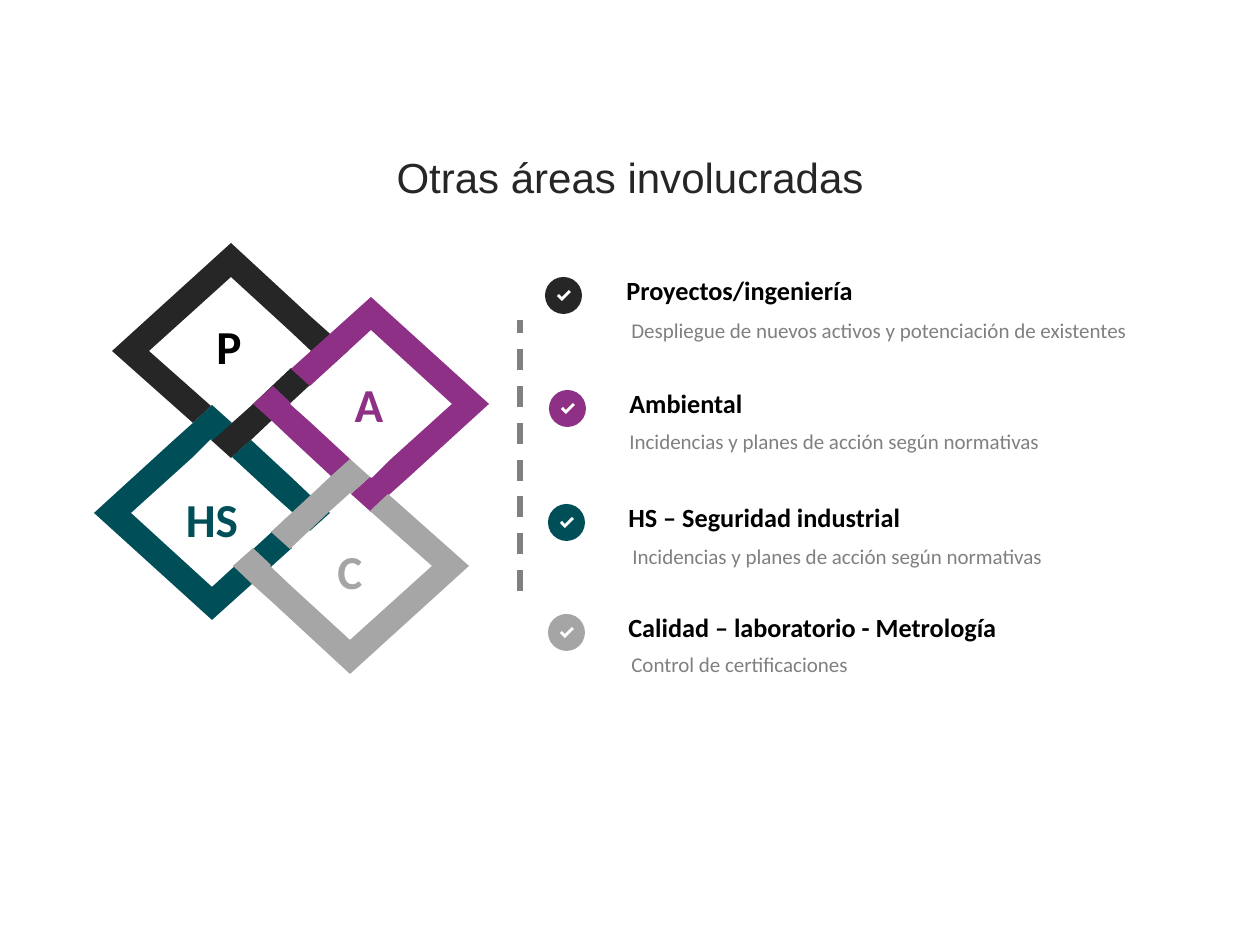
from pptx import Presentation
from pptx.dml.color import RGBColor
from pptx.enum.dml import MSO_LINE
from pptx.enum.shapes import MSO_CONNECTOR as CONN, MSO_SHAPE as SHAPE
from pptx.enum.text import MSO_ANCHOR as ANCHOR, PP_ALIGN as ALIGN
from pptx.oxml.ns import qn
from pptx.util import Pt

PX = 914400 / 126  # EMU per px
DARK, PURPLE, TEAL, GRAY = "262626", "8E3086", "004F58", "A5A5A5"
BLACK, MUTED, WHITE = "000000", "808080", "FFFFFF"

# Interlaced diamond bands, each in two parts; turning by 180° gives the other two
DIAMOND_W, DIAMOND_H = 236, 215
SIDE_LINK = [
    [(98, 163), (79, 180), (38, 142), (20, 125), (0, 107), (20, 89),
     (38, 106), (37, 107), (38, 108), (57, 125)],
    [(118, 0), (38, 72), (57, 89), (118, 33), (199, 107), (137, 163),
     (120, 180), (118, 181), (117, 180), (98, 197), (118, 215), (137, 197),
     (156, 180), (236, 107)],
]
TOP_LINK = [
    [(57, 90), (38, 73), (79, 35), (97, 18), (117, 0), (137, 18),
     (118, 35), (117, 34), (116, 35), (97, 52)],
    [(155, 35), (137, 52), (199, 107), (117, 181), (57, 126), (38, 108),
     (37, 107), (38, 106), (20, 89), (0, 107), (20, 126), (38, 142),
     (117, 215), (236, 107)],
]
CHECK = [(12, 19), (14, 17), (17, 20), (24, 13), (26, 15), (17, 24)]

# letter, left, top, outline, turned, band colour, letter colour, letter box
DIAMONDS = [
    ("P", 112, 243, TOP_LINK, True, DARK, BLACK, (190, 311)),
    ("A", 253, 297, SIDE_LINK, False, PURPLE, PURPLE, (330, 369)),
    ("HS", 94, 405, SIDE_LINK, True, TEAL, TEAL, (173, 484)),
    ("C", 233, 459, TOP_LINK, False, "A6A6A6", GRAY, (311, 536)),
]
# heading, detail, colour, badge position, heading left, detail position
AREAS = [
    ("Proyectos/ingeniería",
     "Despliegue de nuevos activos y potenciación de existentes",
     DARK, (545, 277), 614, (619, 299)),
    ("Ambiental", "Incidencias y planes de acción según normativas",
     PURPLE, (549, 390), 617, (617, 410)),
    ("HS – Seguridad industrial",
     "Incidencias y planes de acción según normativas",
     TEAL, (548, 504), 616, (620, 525)),
    ("Calidad – laboratorio - Metrología", "Control de certificaciones",
     GRAY, (548, 614), 616, (619, 633)),
]


def px(n):
    return round(n * PX)


def rgb(hex_color):
    return RGBColor.from_string(hex_color)


def paint(sp, color):
    sp.shadow.inherit = False
    sp.fill.solid()
    sp.fill.fore_color.rgb = rgb(color)
    sp.line.fill.background()


def write(tf, text, size, color, font="Calibri", bold=False,
          align=ALIGN.LEFT, spacing=None, anchor=ANCHOR.TOP):
    tf.word_wrap = True
    tf.vertical_anchor = anchor
    p = tf.paragraphs[0]
    p.alignment = align
    p.line_spacing = spacing
    r = p.add_run()
    r.text = text
    r.font.name, r.font.size, r.font.bold = font, Pt(size), bold
    r.font.color.rgb = rgb(color)


def add_text(s, x, y, w, h, text, size, color, **fmt):
    box = s.shapes.add_textbox(px(x), px(y), px(w), px(h))
    write(box.text_frame, text, size, color, **fmt)


def add_outline(s, x, y, contours, color):
    contours = [[(x + dx, y + dy) for dx, dy in c] for c in contours]
    builder = s.shapes.build_freeform(*contours[0][0], scale=PX)
    for i, points in enumerate(contours):
        if i:
            builder.move_to(*points[0])
        builder.add_line_segments(points[1:], close=True)
    paint(builder.convert_to_shape(), color)


def add_diamond(s, letter, x, y, outline, turned, color, ink, letter_at):
    if turned:
        outline = [[(DIAMOND_W - dx, DIAMOND_H - dy) for dx, dy in c]
                   for c in outline]
    add_outline(s, x, y, outline, color)
    add_text(s, *letter_at, 78, 71, letter, 27, ink, bold=True,
             align=ALIGN.CENTER)


def add_area(s, heading, detail, color, badge_at, heading_x, detail_at):
    x, y = badge_at
    paint(s.shapes.add_shape(SHAPE.OVAL, px(x), px(y), px(37), px(37)), color)
    add_outline(s, x, y, [CHECK], WHITE)
    add_text(s, heading_x, y - 9, 406, 44, heading, 15, BLACK, bold=True)
    add_text(s, *detail_at, 527, 50, detail, 12, MUTED, spacing=1.5)


def add_divider(s, x, bottom, top):
    line = s.shapes.add_connector(CONN.STRAIGHT, px(x), px(bottom),
                                  px(x), px(top))
    line.line.color.rgb = rgb(MUTED)
    line.line.width = Pt(3)
    line.line.dash_style = MSO_LINE.DASH
    sp_pr = line._element.spPr
    sp_pr.append(sp_pr.makeelement(qn("a:effectLst"), {}))


def add_title(s, text):
    title = s.shapes.title
    title.left, title.top = px(0), px(144)
    title.width, title.height = px(1260), px(66)
    write(title.text_frame, text, 24, DARK, font="Arial",
          align=ALIGN.CENTER, anchor=ANCHOR.MIDDLE)


def main():
    prs = Presentation()
    prs.slide_width, prs.slide_height = px(1260), px(945)
    s = prs.slides.add_slide(prs.slide_layouts[5])

    add_title(s, "Otras áreas involucradas")
    # List of areas
    for area in AREAS:
        add_area(s, *area)
    add_divider(s, 520, 591, 320)
    # Interlaced diamonds
    for diamond in DIAMONDS:
        add_diamond(s, *diamond)

    prs.save("out.pptx")


if __name__ == "__main__":
    main()
